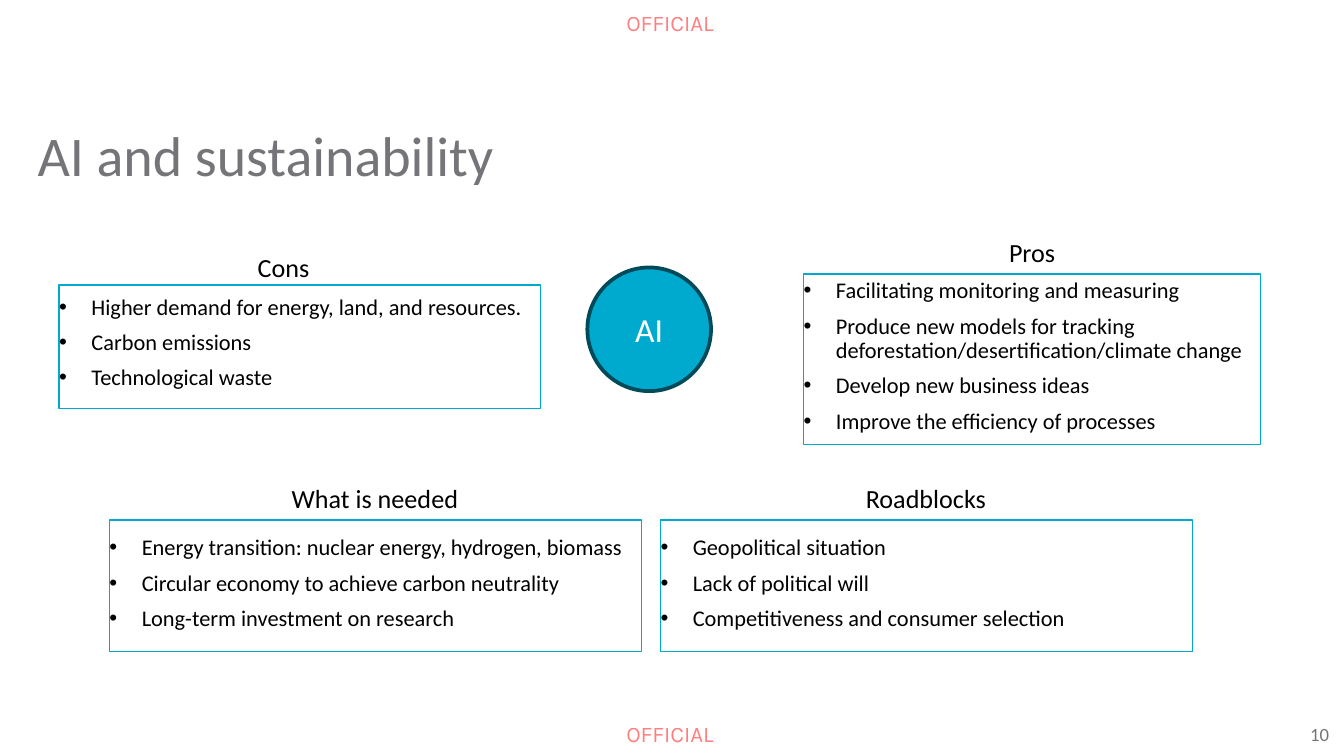
from dataclasses import dataclass

from lxml import etree
from pptx import Presentation
from pptx import util as u
from pptx.dml.color import RGBColor
from pptx.enum import shapes, text
from pptx.oxml.ns import qn

PX = 4572  # EMU per px, 200 px to the inch


@dataclass(frozen=True)
class Theme:
    font: str = "Calibri"
    marking_font: str = "Karla"
    ink: str = "000000"
    grey: str = "757579"
    accent: str = "00A9CE"
    accent_dark: str = "004A5A"
    white: str = "FFFFFF"
    marking: str = "FF0000"
    title_size: int = 30
    hub_size: int = 18
    heading_size: int = 14
    body_size: int = 12
    number_size: int = 10


THEME = Theme()

# Heading, heading box, list box, top inset, points
PANELS = [
    ("Cons", (282, 364, 280, 68), (88, 424, 716, 184), 16, [
        "Higher demand for energy, land, and resources.",
        "Carbon emissions",
        "Technological waste",
    ]),
    ("Pros", (1396, 342, 280, 68), (1196, 408, 680, 254), 8, [
        "Facilitating monitoring and measuring",
        "Produce new models for tracking "
        "deforestation/desertification/climate change",
        "Develop new business ideas",
        "Improve the efficiency of processes",
    ]),
    ("What is needed", (394, 708, 328, 68), (163, 774, 792, 196), 24, [
        "Energy transition: nuclear energy, hydrogen, biomass",
        "Circular economy to achieve carbon neutrality",
        "Long-term investment on research",
    ]),
    ("Roadblocks", (1214, 708, 328, 68), (983, 774, 792, 196), 24, [
        "Geopolitical situation",
        "Lack of political will",
        "Competitiveness and consumer selection",
    ]),
]


def px(*values):
    return [u.Emu(value * PX) for value in values]


def add_run(paragraph, words, size, color, font=THEME.font):
    run = paragraph.add_run()
    run.text = words
    run.font.size = u.Pt(size)
    run.font.name = font
    run.font.color.rgb = RGBColor.from_string(color)
    return run


def set_insets(frame, left, top, right, bottom):
    (frame.margin_left, frame.margin_top,
     frame.margin_right, frame.margin_bottom) = px(left, top, right, bottom)


def add_title(slide, words):
    title = slide.shapes.title
    title.left, title.top, title.width, title.height = px(56, 176, 1890, 140)
    frame = title.text_frame
    set_insets(frame, 0, 4, 0, 0)
    frame.vertical_anchor = text.MSO_ANCHOR.TOP
    frame.auto_size = text.MSO_AUTO_SIZE.NONE
    paragraph = frame.paragraphs[0]
    paragraph.alignment = text.PP_ALIGN.LEFT
    add_run(paragraph, words, THEME.title_size, THEME.grey)


def add_label(slide, box, words, size, color, align=text.PP_ALIGN.LEFT):
    frame = slide.shapes.add_textbox(*px(*box)).text_frame
    frame.word_wrap = True
    paragraph = frame.paragraphs[0]
    paragraph.alignment = align
    add_run(paragraph, words, size, color)


def add_marking(slide, top):
    frame = slide.shapes.add_textbox(*px(932, top, 142, 40)).text_frame
    set_insets(frame, 0, 0, 0, 0)
    frame.word_wrap = False
    marking = add_run(frame.paragraphs[0], "OFFICIAL", THEME.body_size,
                      THEME.marking, THEME.marking_font)
    # Half-transparent lettering
    color = marking.font.fill._xPr.find(f".//{qn('a:srgbClr')}")
    etree.SubElement(color, qn("a:alpha"), val="50000")


def add_outlined(slide, kind, box, line_color, line_width):
    shape = slide.shapes.add_shape(kind, *px(*box))
    shape.shadow.inherit = False
    shape.line.color.rgb = RGBColor.from_string(line_color)
    shape.line.width = u.Pt(line_width)
    return shape


def add_bullet(paragraph):
    properties = paragraph._p.get_or_add_pPr()
    indent = px(48)[0]
    properties.set("marL", str(indent))
    properties.set("indent", str(-indent))
    etree.SubElement(properties, qn("a:buFont"), typeface="Arial")
    etree.SubElement(properties, qn("a:buChar"), char="•")


def add_bullet_box(slide, box, top_inset, points):
    panel = add_outlined(slide, shapes.MSO_SHAPE.RECTANGLE, box,
                         THEME.accent, 0.75)
    panel.fill.background()
    frame = panel.text_frame
    frame.word_wrap = True
    frame.vertical_anchor = text.MSO_ANCHOR.TOP
    set_insets(frame, 0, top_inset, 0, 0)
    for index, point in enumerate(points):
        paragraph = frame.add_paragraph() if index else frame.paragraphs[0]
        add_bullet(paragraph)
        paragraph.alignment = text.PP_ALIGN.LEFT
        paragraph.line_spacing = 0.9
        if index:
            paragraph.space_before = u.Pt(6)
        add_run(paragraph, point, THEME.body_size, THEME.ink)


def add_hub(slide, words):
    hub = add_outlined(slide, shapes.MSO_SHAPE.OVAL, (874, 398, 184, 184),
                       THEME.accent_dark, 2)
    hub.fill.solid()
    hub.fill.fore_color.rgb = RGBColor.from_string(THEME.accent)
    frame = hub.text_frame
    frame.vertical_anchor = text.MSO_ANCHOR.MIDDLE
    paragraph = frame.paragraphs[0]
    paragraph.alignment = text.PP_ALIGN.CENTER
    add_run(paragraph, words, THEME.hub_size, THEME.white)


def main():
    deck = Presentation()
    deck.slide_width, deck.slide_height = px(2000, 1125)
    slide = deck.slides.add_slide(deck.slide_layouts[5])

    # Classification markings at the top and bottom
    for top in (14, 1072):
        add_marking(slide, top)

    add_title(slide, "AI and sustainability")

    # Four headed lists around the hub
    for heading, heading_box, list_box, top_inset, points in PANELS:
        add_bullet_box(slide, list_box, top_inset, points)
        add_label(slide, heading_box, heading, THEME.heading_size, THEME.ink,
                  text.PP_ALIGN.CENTER)
    add_hub(slide, "AI")

    # Page number
    add_label(slide, (1930, 1066, 70, 54), "10", THEME.number_size, THEME.grey)

    deck.save("out.pptx")


if __name__ == "__main__":
    main()
